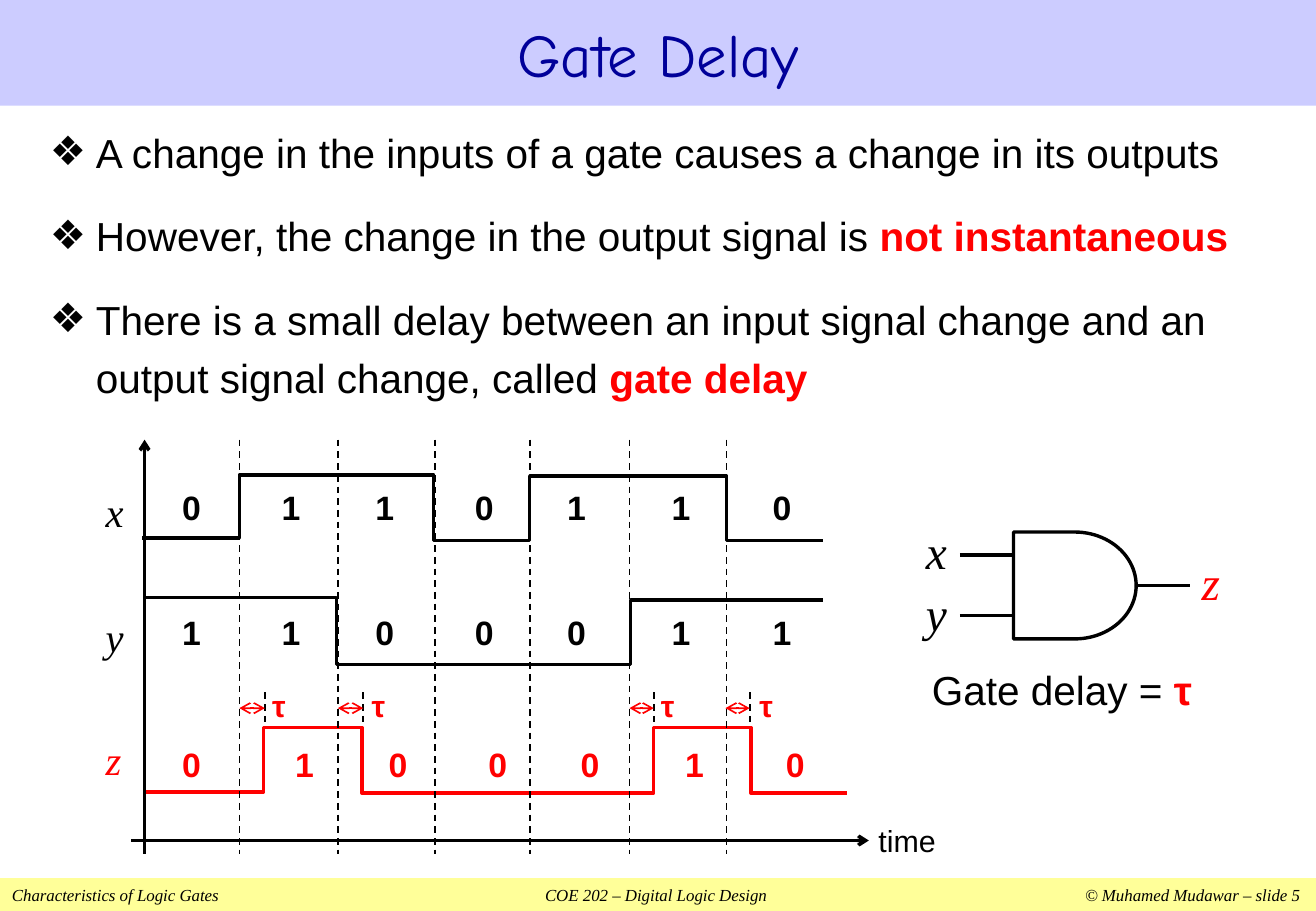
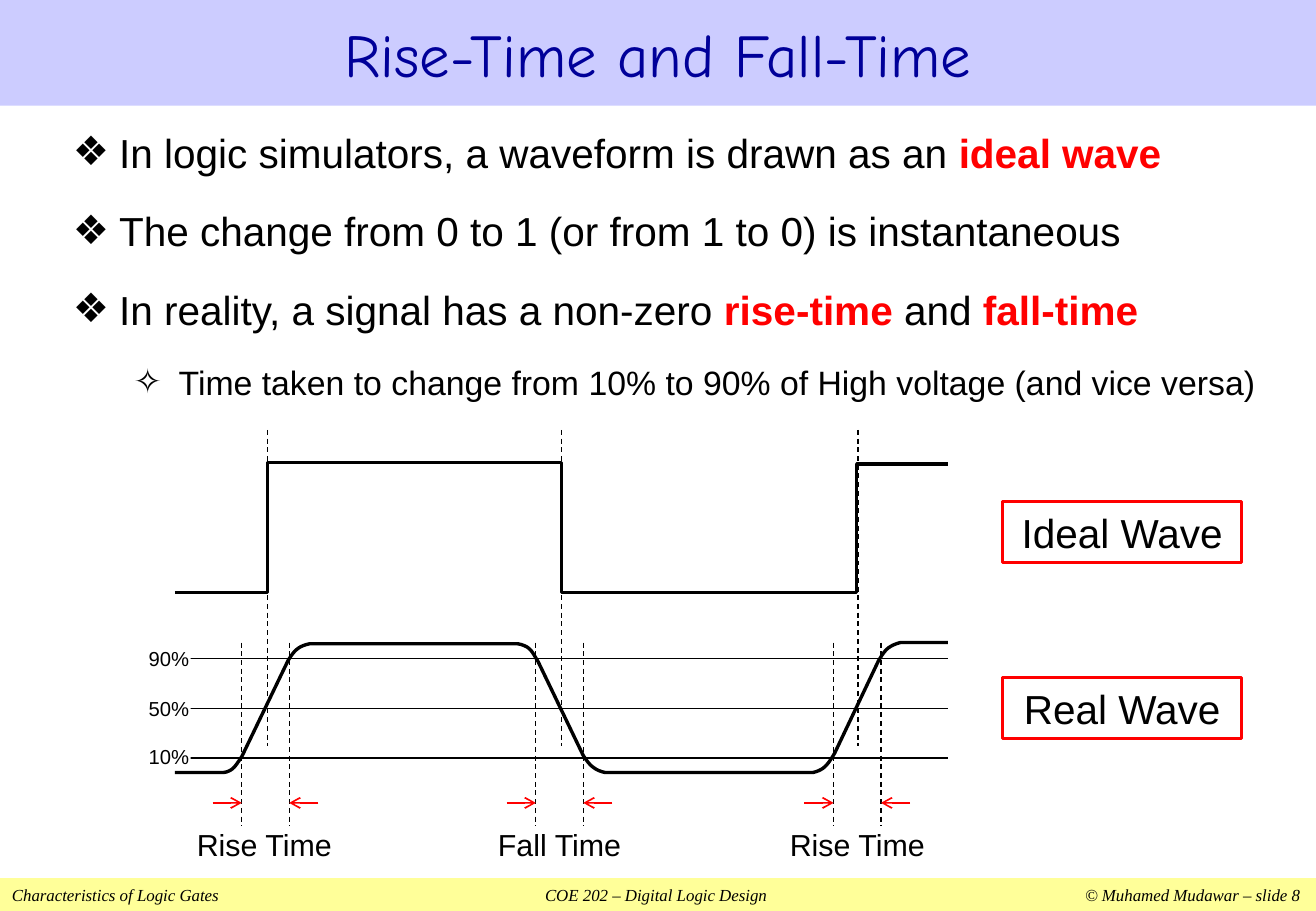
from lxml import etree
from pptx import Presentation
from pptx import util as u
from pptx.dml.color import RGBColor
from pptx.enum import dml, shapes, text
from pptx.oxml.ns import qn

COLORS = {
    "black": "000000",
    "red": "FF0000",
    "white": "FFFFFF",
    "title": "000099",
    "title band": "CCCCFF",
    "footer band": "FFFF99",
}
COLORS = {name: RGBColor.from_string(value) for name, value in COLORS.items()}
SANS, SERIF, COMIC = "Arial", "Times New Roman", "Comic Neue"
CENTER = text.PP_ALIGN.CENTER


def write(shape, marked, size, color="black", font=SANS, bold=None, italic=None,
          align=None, wrap=False, bullet=None, spacing=None):
    frame = shape.text_frame
    frame.word_wrap = wrap
    paragraph = frame.add_paragraph() if frame.text else frame.paragraphs[0]
    paragraph.alignment = align
    if bullet:
        mark, margin, indent, paragraph.level = bullet
        paragraph.line_spacing = 1.2
        paragraph.space_before = u.Pt(spacing)
        properties = paragraph._p.get_or_add_pPr()
        properties.set("marL", str(u.Inches(margin)))
        properties.set("indent", str(u.Inches(indent)))
        etree.SubElement(properties, qn("a:buChar"), char=mark)
    paragraph.font.name = font
    paragraph.font.size = u.Pt(size)
    paragraph.font.bold = bold
    paragraph.font.italic = italic
    paragraph.font.color.rgb = COLORS[color]
    for index, part in enumerate(marked.split("*")):
        if part:
            run = paragraph.add_run()
            run.text = part
            if index % 2:
                run.font.bold = True
                run.font.color.rgb = COLORS["red"]
    return paragraph


def add_line(slide, x1, y1, x2, y2, width=1, color="black", dash=False, ends=()):
    line = slide.shapes.add_connector(
        shapes.MSO_CONNECTOR.STRAIGHT, *map(u.Inches, (x1, y1, x2, y2)))
    line.line.width = u.Pt(width)
    line.line.color.rgb = COLORS[color]
    if dash:
        line.line.dash_style = dml.MSO_LINE.DASH
    for end in ends:
        etree.SubElement(line.line._get_or_add_ln(), qn(f"a:{end}"), type="arrow")
    etree.SubElement(line._element.spPr, qn("a:effectLst"))
    return line


presentation = Presentation()
presentation.slide_width = u.Inches(10.83)
presentation.slide_height = u.Inches(7.5)

BULLET = ("❖", 0.38, -0.38, 0)
SUB_BULLET = ("✧", 0.87, -0.37, 1)
pages = [
    (5, "Gate Delay", (0.31, 0.92, 10.21, 2.58), 15, [
        (BULLET, 24, "A change in the inputs of a gate causes a change in its outputs"),
        (BULLET, 24, "However, the change in the output signal is *not instantaneous*"),
        (BULLET, 24, "There is a small delay between an input signal change and an "
                     "output signal change, called *gate delay*"),
    ]),
    (8, "Rise-Time and Fall-Time", (0.5, 0.92, 10.14, 2.71), 12, [
        (BULLET, 24, "In logic simulators, a waveform is drawn as an *ideal wave*"),
        (BULLET, 24, "The change from 0 to 1 (or from 1 to 0) is instantaneous"),
        (BULLET, 24, "In reality, a signal has a non-zero *rise-time* and *fall-time*"),
        (SUB_BULLET, 20,
         "Time taken to change from 10% to 90% of High voltage (and vice versa)"),
    ]),
]

for number, heading, body_box, spacing, items in pages:
    slide = presentation.slides.add_slide(presentation.slide_layouts[1])

    footer = slide.shapes.add_textbox(*map(u.Inches, (0, 7.23, 10.83, 0.27)))
    footer.fill.solid()
    footer.fill.fore_color.rgb = COLORS["footer band"]
    paragraph = write(
        footer,
        "Characteristics of Logic Gates\tCOE 202 – Digital Logic Design\t"
        f"© Muhamed Mudawar – slide {number}",
        10, font=SERIF, italic=True, wrap=True)
    tabs = etree.Element(qn("a:tabLst"))
    for position, align in ((5.3, "ctr"), (10.6, "r")):
        etree.SubElement(tabs, qn("a:tab"), pos=str(u.Inches(position)), algn=align)
    paragraph._p.get_or_add_pPr().insert(0, tabs)

    title, body = slide.placeholders
    for placeholder, box in ((title, (0, 0, 10.83, 0.87)), (body, body_box)):
        (placeholder.left, placeholder.top,
         placeholder.width, placeholder.height) = map(u.Inches, box)
        placeholder.text_frame.auto_size = text.MSO_AUTO_SIZE.NONE
    title.fill.solid()
    title.fill.fore_color.rgb = COLORS["title band"]
    title.text_frame.vertical_anchor = text.MSO_ANCHOR.MIDDLE
    write(title, heading, 36, "title", COMIC, align=CENTER, wrap=True)
    for bullet, size, item in items:
        write(body, item, size, bullet=bullet, spacing=spacing, wrap=True)

delay_slide, rise_slide = presentation.slides

gate = delay_slide.shapes.add_shape(
    shapes.MSO_SHAPE.FLOWCHART_DELAY, *map(u.Inches, (8.34, 4.38, 1.01, 0.88)))
gate.shadow.inherit = False
gate.fill.solid()
gate.fill.fore_color.rgb = COLORS["white"]
gate.line.color.rgb = COLORS["black"]
gate.line.width = u.Pt(2)
for y in (4.57, 5.07):
    add_line(delay_slide, 7.9, y, 8.34, y, 2)
add_line(delay_slide, 9.35, 4.82, 9.79, 4.82, 2).begin_connect(gate, 3)

add_line(delay_slide, 1.19, 7.03, 1.19, 3.62, 2, ends=["tailEnd"])
add_line(delay_slide, 1.08, 6.92, 7.15, 6.92, 2, ends=["tailEnd"])

waves = [
    (delay_slide, "black", [
        (1.17, 4.43), (1.97, 4.43), (1.97, 3.91), (3.57, 3.91), (3.57, 4.45),
        (4.36, 4.45), (4.36, 3.92), (5.98, 3.92), (5.98, 4.45), (6.77, 4.45)]),
    (delay_slide, "black", [
        (1.18, 4.92), (2.77, 4.92), (2.77, 5.47), (5.19, 5.47), (5.19, 4.94),
        (6.77, 4.94)]),
    (delay_slide, "red", [
        (1.2, 6.52), (2.17, 6.52), (2.17, 5.99), (2.98, 5.99), (2.98, 6.53),
        (5.38, 6.53), (5.38, 5.99), (6.18, 5.99), (6.18, 6.53), (6.97, 6.53)]),
    (rise_slide, "black", [
        (1.44, 4.88), (2.2, 4.88), (2.2, 3.81), (4.62, 3.81), (4.62, 4.88),
        (7.05, 4.88), (7.05, 3.82), (7.8, 3.82)]),
    (rise_slide, "black", [
        (1.44, 6.36), (1.84, 6.36), (1.92, 6.35, 1.94, 6.3, 1.99, 6.23),
        (2.37, 5.44), (2.42, 5.36, 2.45, 5.32, 2.55, 5.3),
        (4.26, 5.3), (4.37, 5.32, 4.38, 5.37, 4.43, 5.45),
        (4.8, 6.22), (4.84, 6.28, 4.88, 6.34, 4.98, 6.36),
        (6.69, 6.36), (6.78, 6.34, 6.81, 6.3, 6.87, 6.2),
        (7.23, 5.44), (7.28, 5.36, 7.3, 5.32, 7.41, 5.29), (7.8, 5.29)]),
]
CURVE_STEPS = 10
for slide, color, steps in waves:
    points = []
    for step in steps:
        if len(step) == 2:
            points.append(step)
            continue
        x0, y0 = points[-1]
        x1, y1, x2, y2, x3, y3 = step
        for index in range(1, CURVE_STEPS + 1):
            t = index / CURVE_STEPS
            weights = ((1 - t) ** 3, 3 * t * (1 - t) ** 2, 3 * t * t * (1 - t), t ** 3)
            points.append((
                sum(w * x for w, x in zip(weights, (x0, x1, x2, x3))),
                sum(w * y for w, y in zip(weights, (y0, y1, y2, y3)))))
    points = [(u.Inches(x), u.Inches(y)) for x, y in points]
    builder = slide.shapes.build_freeform(*points[0], scale=1.0)
    builder.add_line_segments(points[1:], close=False)
    wave = builder.convert_to_shape()
    wave.shadow.inherit = False
    wave.fill.background()
    wave.line.color.rgb = COLORS[color]
    wave.line.width = u.Pt(2)

for x in (1.97, 2.78, 3.58, 4.36, 5.18, 5.98):
    add_line(delay_slide, x, 3.62, x, 7.03, dash=True)

labels = [
    (7.52, 4.25, 0.38, 0.57, "x", 28, "black", SERIF, None, True),
    (7.52, 4.76, 0.38, 0.57, "y", 28, "black", SERIF, None, True),
    (9.79, 4.51, 0.35, 0.57, "z", 28, "red", SERIF, None, True),
    (7.57, 5.43, 2.36, 0.5, "Gate delay = *τ*", 24),
    (7.13, 6.72, 0.68, 0.36, "time", 18),
]
signals = [
    ("x", 3.96, 3.96, "0110110", "black", 0),
    ("y", 4.99, 4.99, "1100011", "black", 0),
    ("z", 6, 6.07, "0100010", "red", 0.11),
]
for name, name_top, top, bits, color, shift in signals:
    labels.append((0.77, name_top, 0.35, 0.46, name, 24, color, SERIF, None, True))
    for index, left in enumerate((1.4, 2.22, 2.99, 3.81, 4.57, 5.43, 6.26)):
        left += shift if index else 0
        labels.append((left, top, 0.36, 0.39, bits[index], 20, color, SANS, True))

for start, end, tau_left in (
        (1.97, 2.18, 2.14), (2.78, 2.99, 2.96), (5.18, 5.38, 5.34), (5.97, 6.17, 6.15)):
    add_line(delay_slide, end, 5.7, end, 5.98, dash=True)
    add_line(delay_slide, start, 5.83, end, 5.83, color="red",
             ends=["headEnd", "tailEnd"])
    labels.append((tau_left, 5.61, 0.31, 0.4, "τ", 18, "red", SANS, True))

for left, top, width, height, *style in labels:
    box = delay_slide.shapes.add_textbox(*map(u.Inches, (left, top, width, height)))
    write(box, *style)

for top, name in ((4.13, "Ideal Wave"), (5.58, "Real Wave")):
    frame_box = rise_slide.shapes.add_shape(
        shapes.MSO_SHAPE.RECTANGLE, *map(u.Inches, (8.25, top, 1.97, 0.5)))
    frame_box.shadow.inherit = False
    frame_box.fill.background()
    frame_box.line.color.rgb = COLORS["red"]
    frame_box.line.width = u.Pt(2)
    write(frame_box, name, 24, align=CENTER)

for x in (2.2, 4.62, 7.06):
    add_line(rise_slide, x, 3.54, x, 6.14, 0.75, dash=True)

for y, top, level in ((5.42, 5.31, "90%"), (5.83, 5.72, "50%"), (6.24, 6.12, "10%")):
    add_line(rise_slide, 1.44, y, 7.8, y, 0.75)
    box = rise_slide.shapes.add_textbox(*map(u.Inches, (1.21, top, 0.36, 0.22)))
    box.fill.solid()
    box.fill.fore_color.rgb = COLORS["white"]
    frame = box.text_frame
    frame.margin_left = frame.margin_right = frame.margin_top = frame.margin_bottom = 0
    frame.vertical_anchor = text.MSO_ANCHOR.MIDDLE
    write(box, level, 12, align=CENTER)

for start, end, left, name in (
        (1.99, 2.38, 1.42, "Rise Time"),
        (4.41, 4.8, 3.85, "Fall Time"),
        (6.86, 7.25, 6.3, "Rise Time")):
    for x, tail in ((start, start - 0.24), (end, end + 0.24)):
        add_line(rise_slide, x, 5.29, x, 6.8, 0.75, dash=True)
        add_line(rise_slide, tail, 6.61, x, 6.61, color="red", ends=["tailEnd"])
    box = rise_slide.shapes.add_textbox(*map(u.Inches, (left, 6.75, 1.51, 0.4)))
    write(box, name, 18, align=CENTER)

presentation.save("out.pptx")
